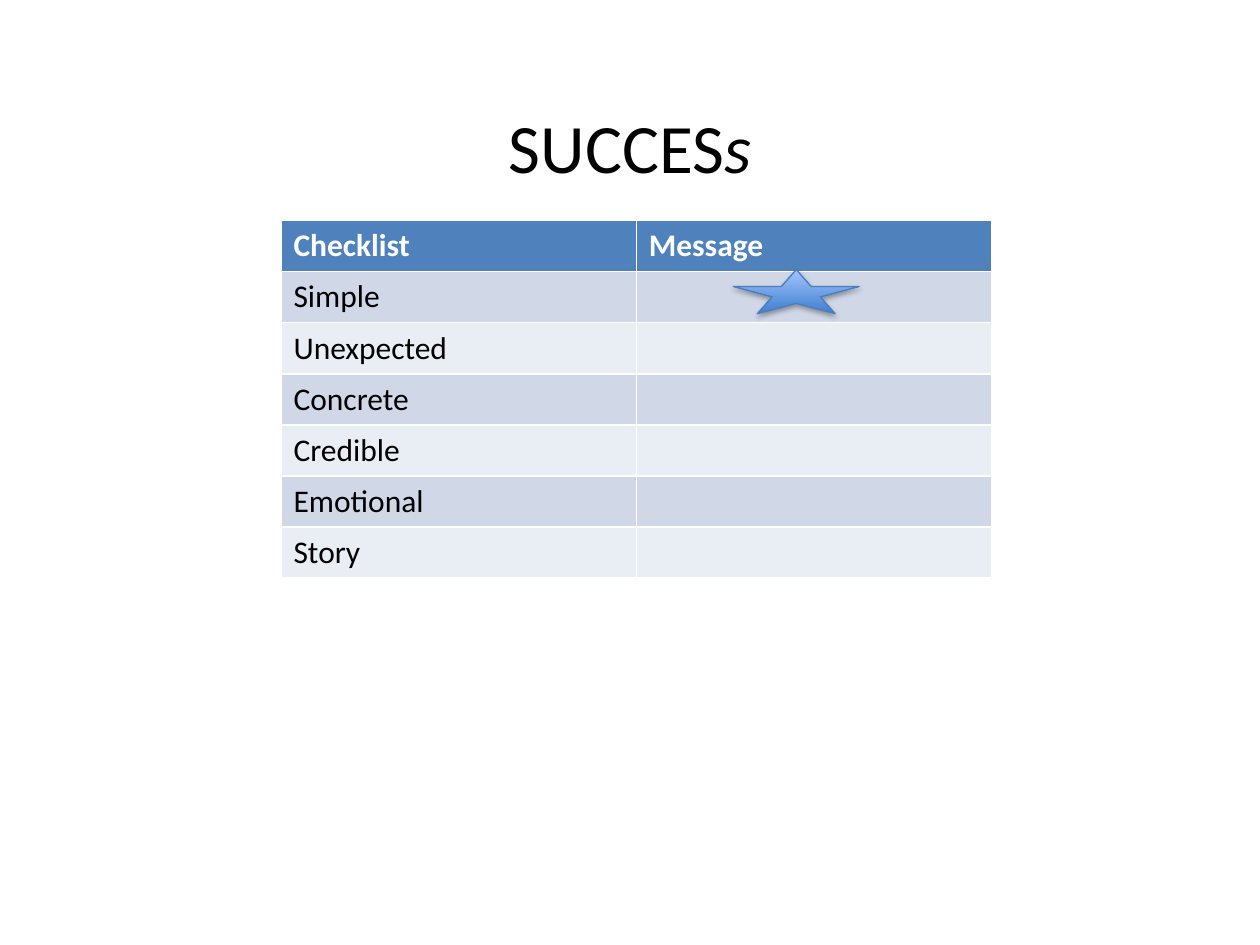
from dataclasses import dataclass

from lxml import etree
from pptx import Presentation
from pptx.dml.color import RGBColor
from pptx.enum.shapes import MSO_SHAPE
from pptx.enum.text import MSO_ANCHOR, PP_ALIGN
from pptx.oxml.ns import qn
from pptx.util import Inches, Pt

STAR = MSO_SHAPE.STAR_5_POINT
MIDDLE = MSO_ANCHOR.MIDDLE
CENTER = PP_ALIGN.CENTER
TITLE_ONLY = 5


@dataclass(frozen=True)
class Theme:
    font: str = "Calibri"
    title_size: float = 39.6
    table_size: float = 18
    text: RGBColor = RGBColor(0, 0, 0)
    header_text: RGBColor = RGBColor(255, 255, 255)
    header_fill: RGBColor = RGBColor(0x4F, 0x81, 0xBD)
    band_dark: RGBColor = RGBColor(0xD0, 0xD8, 0xE8)
    band_light: RGBColor = RGBColor(0xE9, 0xED, 0xF4)
    star_bottom: RGBColor = RGBColor(0x3F, 0x80, 0xCE)
    star_top: RGBColor = RGBColor(0xA4, 0xC4, 0xFF)
    star_line: RGBColor = RGBColor(0x4B, 0x7E, 0xBC)
    shadow: str = "000000"


theme = Theme()


def format_font(font, size, color, bold=False):
    font.name = theme.font
    font.size = Pt(size)
    font.color.rgb = color
    font.bold = bold


presentation = Presentation()
presentation.slide_width = Inches(10)
presentation.slide_height = Inches(7.5)
slide = presentation.slides.add_slide(presentation.slide_layouts[TITLE_ONLY])

# Title
title = slide.shapes.title
title.left, title.top = Inches(0.5), Inches(0.76)
title.width, title.height = Inches(9), Inches(0.79)
title.text_frame.vertical_anchor = MIDDLE
paragraph = title.text_frame.paragraphs[0]
paragraph.alignment = CENTER
paragraph.add_run().text = "SUCCES"
last_letter = paragraph.add_run()
last_letter.text = "s"
last_letter.font.italic = True
format_font(paragraph.font, theme.title_size, theme.text)

# Checklist table; its default style supplies the white rules
rows = [
    ("Checklist", "Message"),
    ("Simple", ""),
    ("Unexpected", ""),
    ("Concrete", ""),
    ("Credible", ""),
    ("Emotional", ""),
    ("Story", ""),
]
table = slide.shapes.add_table(
    len(rows), 2, Inches(2.23), Inches(1.75), Inches(5.64), Inches(2.84)
).table
for row_index, row in enumerate(rows):
    is_header = row_index == 0
    band_fill = theme.band_dark if row_index % 2 else theme.band_light
    for column_index, text in enumerate(row):
        cell = table.cell(row_index, column_index)
        cell.fill.solid()
        cell.fill.fore_color.rgb = theme.header_fill if is_header else band_fill
        cell.text = text
        format_font(
            cell.text_frame.paragraphs[0].font,
            theme.table_size,
            theme.header_text if is_header else theme.text,
            bold=is_header,
        )

# Star marking the first item
star = slide.shapes.add_shape(
    STAR, Inches(5.82), Inches(2.14), Inches(1), Inches(0.35)
)
star.fill.gradient()
star.fill.gradient_angle = 90
for stop, color in zip(star.fill.gradient_stops, (theme.star_bottom, theme.star_top)):
    stop.color.rgb = color
star.line.color.rgb = theme.star_line
star.line.width = Pt(0.75)

star.shadow.inherit = False
effects = star.element.spPr.find(qn("a:effectLst"))
shadow = etree.SubElement(
    effects,
    qn("a:outerShdw"),
    blurRad=str(Pt(3.1)),
    dist=str(Pt(1.8)),
    dir="5400000",
    rotWithShape="0",
)
shadow_color = etree.SubElement(shadow, qn("a:srgbClr"), val=theme.shadow)
etree.SubElement(shadow_color, qn("a:alpha"), val="35000")

presentation.save("out.pptx")
